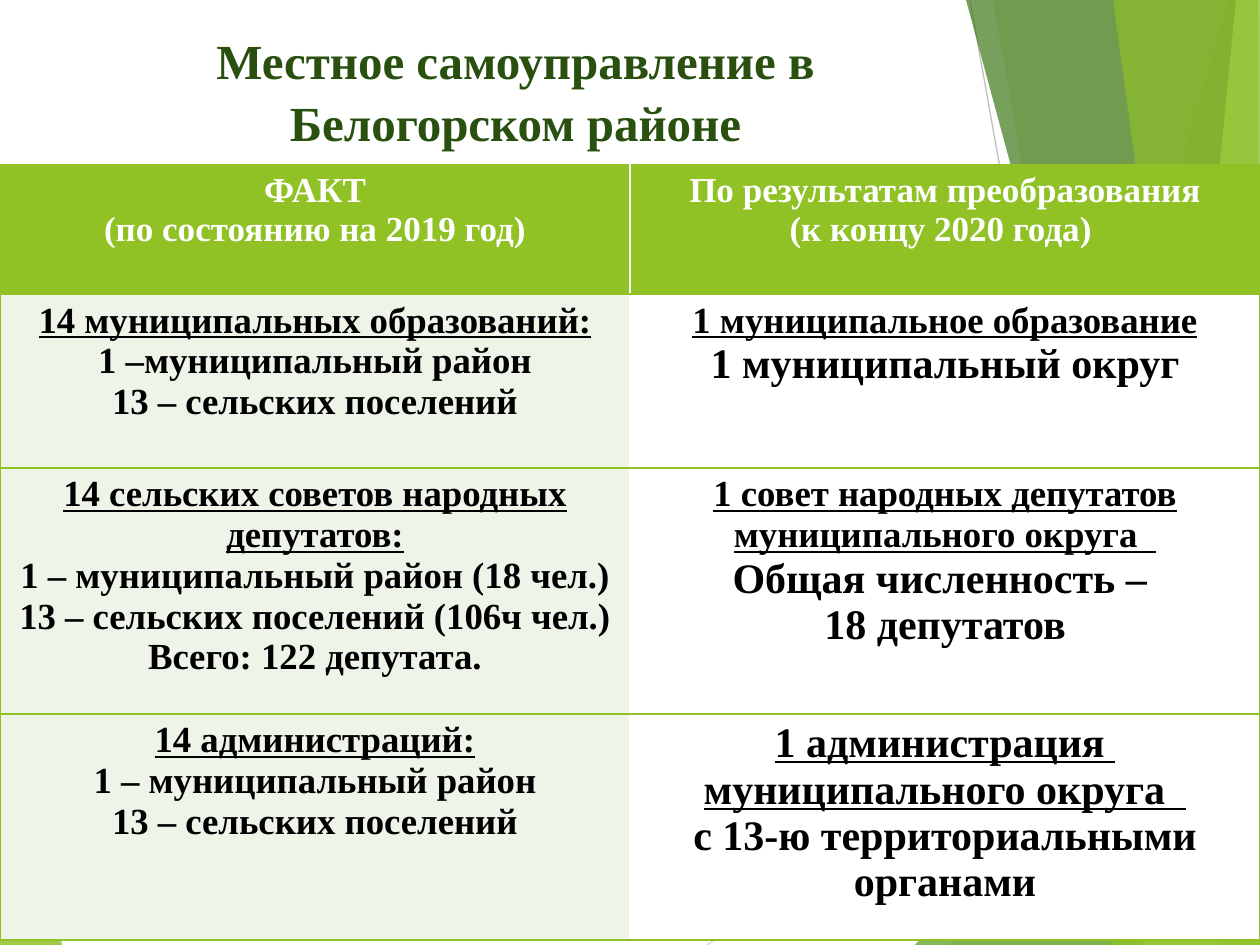
from dataclasses import dataclass

from lxml import etree
from pptx import Presentation
from pptx.dml.color import RGBColor
from pptx.enum.shapes import MSO_CONNECTOR
from pptx.enum.text import MSO_ANCHOR, MSO_AUTO_SIZE, PP_ALIGN
from pptx.oxml.ns import qn
from pptx.util import Pt

SCALE = 914400 / 126
WIDE, HIGH = 1260, 945
FONT = "Times New Roman"
CENTER = PP_ALIGN.CENTER
MIDDLE = MSO_ANCHOR.MIDDLE
FIXED = MSO_AUTO_SIZE.NONE
STRAIGHT = MSO_CONNECTOR.STRAIGHT

COLORS = {
    "lime": "90C226",
    "leaf": "54A021",
    "moss": "3F7819",
    "pale": "C0E474",
    "title": "2A5010",
    "mint": "EEF4E8",
    "white": "FFFFFF",
    "black": "000000",
    "light": "D9D9D9",
    "gray": "BFBFBF",
}


@dataclass
class Facet:
    points: list[tuple[int, int]]
    color: str
    alpha: int


@dataclass
class Ray:
    start: tuple[int, int]
    end: tuple[int, int]
    color: str


@dataclass
class Line:
    text: str
    size: int = 21
    under: bool = False


END = (WIDE, HIGH)
TOP = (WIDE, 0)
LEFT = Facet([(0, 553), (62, HIGH), (0, HIGH)], "lime", 85)
RAYS = [
    Ray((707, HIGH), (WIDE, 576), "light"),
    Ray((970, 0), (1139, HIGH), "gray"),
]
RIGHT = [
    Facet([(1229, 0), (950, HIGH), END, TOP], "lime", 30),
    Facet([(993, 0), (1158, HIGH), END, TOP], "lime", 20),
    Facet([(915, HIGH), (WIDE, 541), END], "leaf", 72),
    Facet([(966, 0), (1222, HIGH), END, TOP], "moss", 70),
    Facet([(1236, 0), (1143, HIGH), END, TOP], "pale", 70),
    Facet([(1113, 0), (1242, HIGH), END, (1258, 0)], "lime", 65),
    Facet([(1110, HIGH), (WIDE, 674), END], "lime", 80),
]

ROWS = [129, 174, 246, 226]
CELLS = [
    [
        [Line("ФАКТ", 20), Line("(по состоянию на 2019 год)", 20)],
        [Line("По результатам преобразования", 20),
         Line("(к концу 2020 года) ", 20)],
    ],
    [
        [Line("14 муниципальных образований:", under=True),
         Line("1 –муниципальный район"),
         Line("13 – сельских поселений")],
        [Line("1 муниципальное образование", under=True),
         Line("1 муниципальный округ", 24)],
    ],
    [
        [Line("14 сельских советов народных депутатов:", under=True),
         Line("1 – муниципальный район (18 чел.)"),
         Line("13 – сельских поселений (106ч чел.)"),
         Line("Всего: 122 депутата.")],
        [Line("1 совет народных депутатов муниципального округа  ", under=True),
         Line("Общая численность – ", 24),
         Line("18 депутатов", 24)],
    ],
    [
        [Line("14 администраций:", under=True),
         Line("1 – муниципальный район"),
         Line("13 – сельских поселений")],
        [Line("1 администрация ", 24, True),
         Line("муниципального округа  ", 24, True),
         Line("с 13-ю территориальными органами", 24)],
    ],
]


def px(num: int) -> int:
    return round(num * SCALE)


def rgb(name: str) -> RGBColor:
    return RGBColor.from_string(COLORS[name])


def write(para, text: str, *, size: int, color: str, under: bool = False) -> None:
    para.alignment = CENTER
    run = para.add_run()
    run.text = text
    font = run.font
    font.name, font.size, font.bold = FONT, Pt(size), True
    font.underline = under
    font.color.rgb = rgb(color)


def draw_facet(slide, facet: Facet) -> None:
    first, *rest = facet.points
    path = slide.shapes.build_freeform(*first, scale=SCALE)
    path.add_line_segments(rest, close=True)
    shape = path.convert_to_shape()
    shape.shadow.inherit = False
    shape.line.fill.background()
    shape.fill.solid()
    shape.fill.fore_color.rgb = rgb(facet.color)
    tint = shape.fill._xPr.find(".//" + qn("a:srgbClr"))
    etree.SubElement(tint, qn("a:alpha"), val=str(facet.alpha * 1000))


def draw_ray(slide, ray: Ray) -> None:
    ends = [px(num) for num in ray.start + ray.end]
    line = slide.shapes.add_connector(STRAIGHT, *ends)
    line.line.color.rgb = rgb(ray.color)
    line.line.width = Pt(0.75)
    etree.SubElement(line._element.spPr, qn("a:effectLst"))


def draw_title(slide, text: str) -> None:
    title = slide.shapes.title
    title.left, title.top, title.width, title.height = map(px, (84, 24, 863, 131))
    frame = title.text_frame
    frame.word_wrap, frame.auto_size = True, FIXED
    frame.vertical_anchor = MIDDLE
    para = frame.paragraphs[0]
    para.line_spacing = 1.05
    write(para, text, size=28, color="title")


def add_edges(cell, sides: str) -> None:
    """Draw the cell borders; call before the fill, which must follow them."""
    props = cell._tc.get_or_add_tcPr()
    for side in sides:
        edge = etree.SubElement(props, qn("a:ln" + side), w=str(Pt(1)))
        fill = etree.SubElement(edge, qn("a:solidFill"))
        etree.SubElement(fill, qn("a:srgbClr"), val=COLORS["lime"])


def draw_table(slide) -> None:
    frame = slide.shapes.add_table(
        len(ROWS), 2, 0, px(165), px(WIDE), px(sum(ROWS)))
    table = frame.table
    for row, high in zip(table.rows, ROWS):
        row.height = px(high)
    for i, row in enumerate(CELLS):
        for j, lines in enumerate(row):
            cell = table.cell(i, j)
            add_edges(cell, "RTB" if j else "LTB")
            cell.fill.solid()
            body = "white" if j else "mint"
            cell.fill.fore_color.rgb = rgb(body if i else "lime")
            text = cell.text_frame
            for k, line in enumerate(lines):
                para = text.add_paragraph() if k else text.paragraphs[0]
                write(para, line.text, size=line.size, under=line.under,
                      color="black" if i else "white")


def main() -> None:
    deck = Presentation()
    deck.slide_width, deck.slide_height = px(WIDE), px(HIGH)
    slide = deck.slides.add_slide(deck.slide_layouts[5])
    draw_facet(slide, LEFT)
    for ray in RAYS:
        draw_ray(slide, ray)
    for facet in RIGHT:
        draw_facet(slide, facet)
    draw_title(slide, "Местное самоуправление в Белогорском районе")
    draw_table(slide)
    deck.save("out.pptx")


if __name__ == "__main__":
    main()
